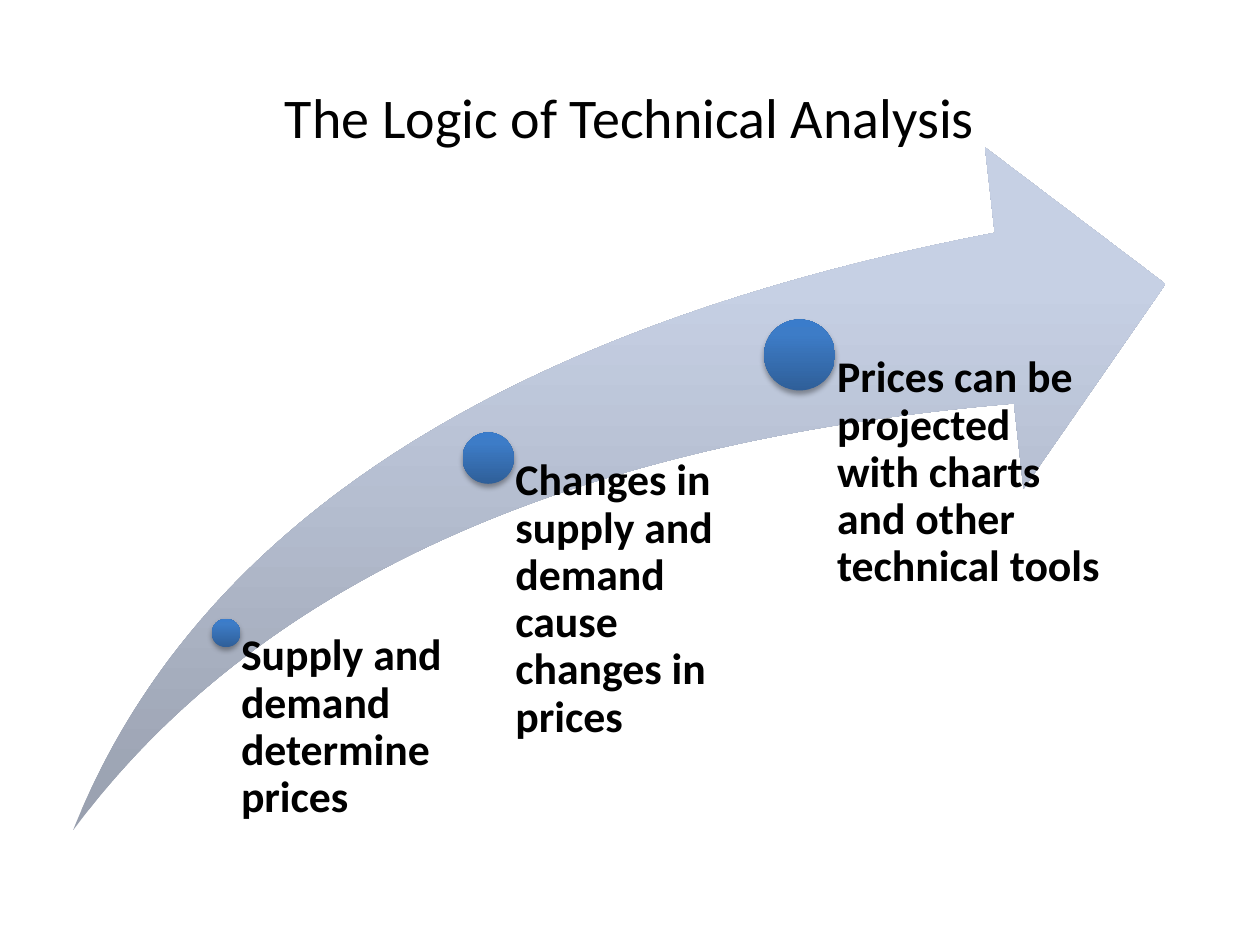
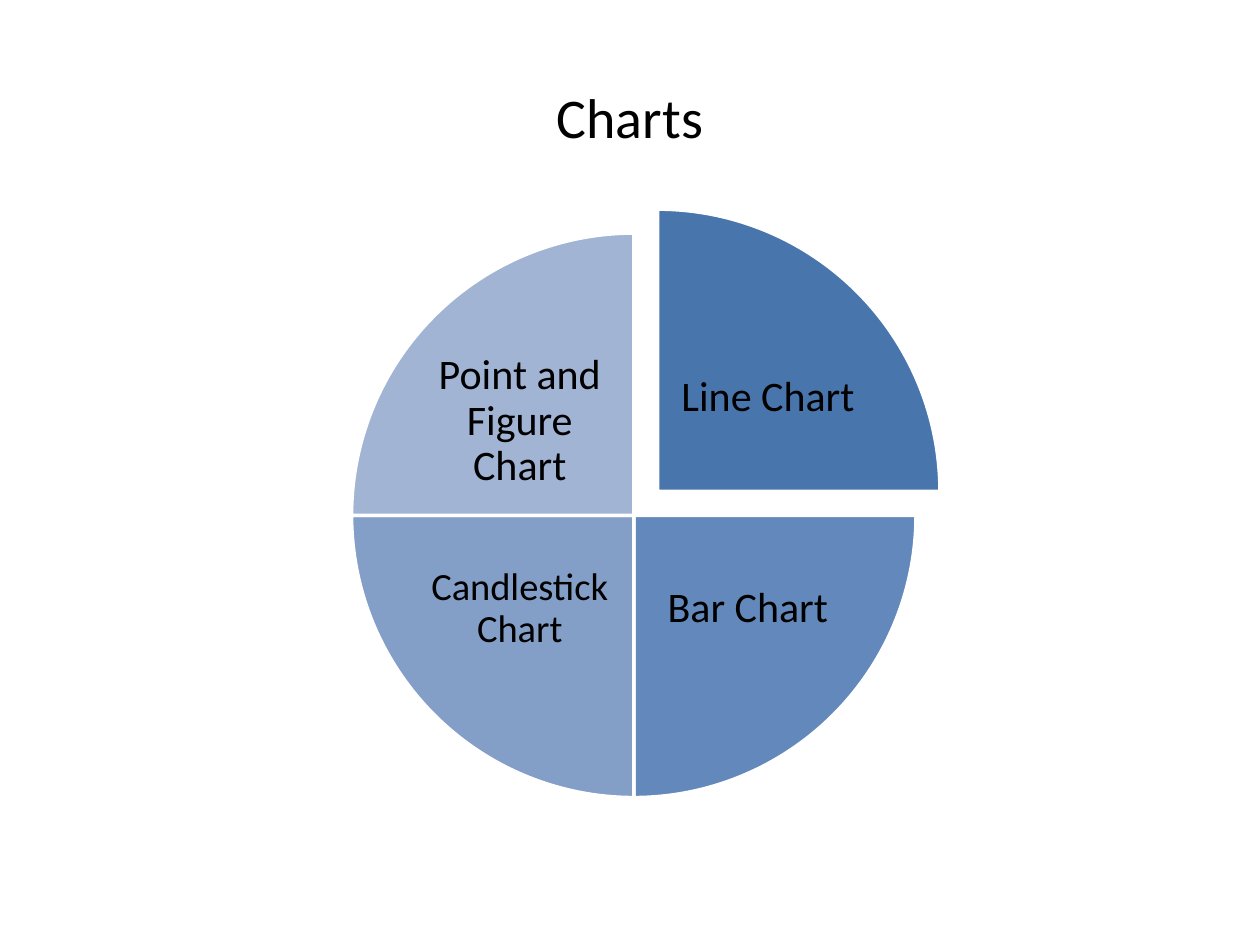
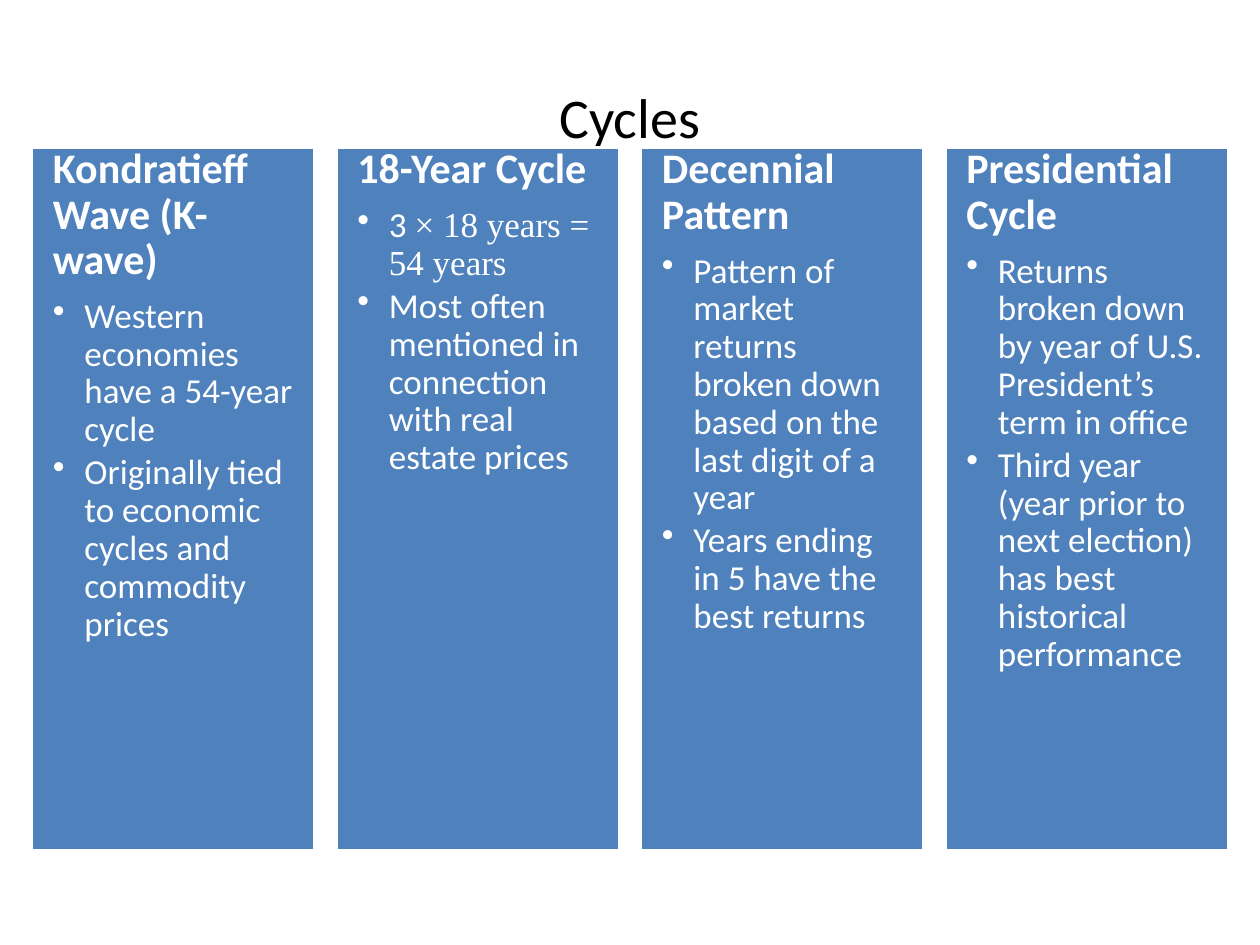
from copy import deepcopy

from lxml.etree import SubElement
from pptx import Presentation
from pptx.dml.color import RGBColor
from pptx.enum.shapes import MSO_SHAPE as Preset
from pptx.enum.text import MSO_ANCHOR as Anchor, PP_ALIGN as Align
from pptx.oxml.ns import qn
from pptx.util import Inches, Pt

WIDTH, HEIGHT = 10, 7.5
FONT, MATH_FONT = "Calibri", "Times New Roman"
BLACK, WHITE, BLUE = "000000", "FFFFFF", "4F81BD"
STOPS = (0, 0.8, 1)
SWOOSH_COLORS = ("99A0AF", "C6D0E4", "C7D1E5")
BALL_COLORS = ("2F5F99", "3D7CC7", "3A7CCB")
LINE_SPACING, HEADING_GAP, BULLET_GAP = 0.9, 0.35, 0.15

MILESTONES = [
    (0.14, 0.711, 0.026, 0.233, "Supply and demand determine prices"),
    (0.38, 0.455, 0.047, 0.24, "Changes in supply and demand cause changes in prices"),
    (0.665, 0.304, 0.065, 0.276,
     "Prices can be projected with charts and other technical tools"),
]
SLICES = [
    ("Line Chart", "4875AC", 24, 1, -1, 0.19, 0.05),
    ("Bar Chart", "6389BC", 24, 1, 1, 0, 0.08),
    ("Candlestick Chart", "839EC7", 22, -1, 1, 0, 0.08),
    ("Point and Figure Chart", "A2B4D4", 24, -1, -1, 0, 0.08),
]
CYCLES = [
    ("Kondratieff Wave (K-wave)", [
        [("Western economies have a 54-year cycle", FONT)],
        [("Originally tied to economic cycles and commodity prices", FONT)]]),
    ("18-Year Cycle", [
        [("3 ", FONT), ("× 18 years = 54 years", MATH_FONT)],
        [("Most often mentioned in connection with real estate prices", FONT)]]),
    ("Decennial Pattern", [
        [("Pattern of market returns broken down based on the last digit of a year", FONT)],
        [("Years ending in 5 have the best returns", FONT)]]),
    ("Presidential Cycle", [
        [("Returns broken down by year of U.S. President’s term in office", FONT)],
        [("Third year (year prior to next election) has best historical performance", FONT)]]),
]


def rgb(color):
    return RGBColor.from_string(color)


def add_preset(page, preset, left, top, width, height, fill=None, outline=None):
    shape = page.shapes.add_shape(
        preset, Inches(left), Inches(top), Inches(width), Inches(height))
    shape.shadow.inherit = False
    if fill:
        shape.fill.solid()
        shape.fill.fore_color.rgb = rgb(fill)
    if outline:
        shape.line.color.rgb = rgb(outline)
        shape.line.width = Pt(2)
    else:
        shape.line.fill.background()
    return shape


def shade(shape, colors):
    shape.fill.gradient()
    shape.fill.gradient_angle = 90
    stop_list = next(shape._element.spPr.iter(qn("a:gsLst")))
    stop_list.append(deepcopy(stop_list[0]))
    for stop, position, color in zip(shape.fill.gradient_stops, STOPS, colors):
        stop.position = position
        stop.color.rgb = rgb(color)


def cast_shadow(shape):
    effects = shape._element.spPr.find(qn("a:effectLst"))
    shadow = SubElement(effects, qn("a:outerShdw"), blurRad=str(Pt(3.1)),
                        dist=str(Pt(1.8)), dir="5400000", rotWithShape="0")
    color = SubElement(shadow, qn("a:srgbClr"), val=BLACK)
    SubElement(color, qn("a:alpha"), val="35000")


def set_frame(frame, insets, anchor=Anchor.TOP):
    frame.word_wrap = True
    frame.vertical_anchor = anchor
    (frame.margin_left, frame.margin_top,
     frame.margin_right, frame.margin_bottom) = map(Inches, insets)


def style_para(para, size, color=BLACK, bold=False, align=Align.LEFT, gap=HEADING_GAP):
    para.alignment = align
    para.line_spacing = LINE_SPACING
    para.space_after = Pt(size * gap)
    font = para.font
    font.name, font.size, font.bold = FONT, Pt(size), bold
    font.color.rgb = rgb(color)


def add_label(page, text, left, top, width, height, insets,
              anchor=Anchor.TOP, **style):
    box = page.shapes.add_textbox(
        Inches(left), Inches(top), Inches(width), Inches(height))
    set_frame(box.text_frame, insets, anchor)
    para = box.text_frame.paragraphs[0]
    para.text = text
    style_para(para, **style)
    return para


def add_bullet(frame, spans):
    para = frame.add_paragraph()
    para.level = 1
    props = para._p.get_or_add_pPr()
    props.set("marL", str(Inches(0.25)))
    props.set("indent", str(Inches(-0.25)))
    SubElement(props, qn("a:buChar"), char="•")
    style_para(para, 20, WHITE, gap=BULLET_GAP)
    for text, font_name in spans:
        span = para.add_run()
        span.text = text
        if font_name != FONT:
            span.font.name = font_name


def add_page(deck, title):
    page = deck.slides.add_slide(deck.slide_layouts[6])
    page.background.fill.solid()
    page.background.fill.fore_color.rgb = rgb(WHITE)
    para = add_label(page, title, 0.05 * WIDTH, 0.04 * HEIGHT, 0.9 * WIDTH, HEIGHT / 6,
                     (0.1, 0.05, 0.1, 0.05), Anchor.MIDDLE,
                     size=32, align=Align.CENTER, gap=0)
    para.line_spacing = 1.0
    return page


def build_logic(deck):
    page = add_page(deck, "The Logic of Technical Analysis")
    left, top, width, height = 0.58, 1.17, 8.67, 5.42
    swoosh = add_preset(page, Preset.SWOOSH_ARROW, left, top, width, height)
    swoosh.adjustments[0] = swoosh.adjustments[1] = 0.25
    shade(swoosh, SWOOSH_COLORS)
    for across, down, ball_share, text_share, text in MILESTONES:
        x, y = left + across * width, top + down * height
        size = ball_share * width
        ball = add_preset(page, Preset.OVAL, x - size / 2, y - size / 2, size, size)
        shade(ball, BALL_COLORS)
        cast_shadow(ball)
        add_label(page, text, x, y, text_share * width, top + height - y,
                  (0.53 * size, 0, 0, 0), size=25, bold=True)


def build_charts(deck):
    page = add_page(deck, "Charts")
    center_x, center_y, diameter = 5.03, 4.09, 4.48
    label_width, label_height, row_gap = 1.65, 1.33, 0.08
    for index, (text, color, size, side, row, pull, column_gap) in enumerate(SLICES):
        x, y = center_x + side * pull, center_y + row * pull
        pie = add_preset(page, Preset.PIE, x - diameter / 2, y - diameter / 2,
                         diameter, diameter, color, WHITE)
        start = (270 + 90 * index) % 360
        pie.adjustments[0] = start * 0.6
        pie.adjustments[1] = (start + 90) % 360 * 0.6
        label_x = x + side * (column_gap + label_width / 2) - label_width / 2
        label_y = y + row * (row_gap + label_height / 2) - label_height / 2
        add_label(page, text, label_x, label_y, label_width, label_height,
                  (0.03,) * 4, Anchor.MIDDLE, size=size, align=Align.CENTER)


def build_cycles(deck):
    page = add_page(deck, "Cycles")
    margin, top, width, height = 0.25, 1.17, 2.25, 5.58
    pitch = (WIDTH - 2 * margin - width) / (len(CYCLES) - 1)
    for column, (heading, bullets) in enumerate(CYCLES):
        panel = add_preset(page, Preset.RECTANGLE, margin + column * pitch, top,
                           width, height, BLUE, WHITE)
        frame = panel.text_frame
        set_frame(frame, (0.17, 0, 0.17, 0))
        frame.paragraphs[0].text = heading
        style_para(frame.paragraphs[0], 24, WHITE, bold=True)
        for spans in bullets:
            add_bullet(frame, spans)


def main():
    deck = Presentation()
    deck.slide_width, deck.slide_height = Inches(WIDTH), Inches(HEIGHT)
    build_logic(deck)
    build_charts(deck)
    build_cycles(deck)
    deck.save("out.pptx")


if __name__ == "__main__":
    main()
